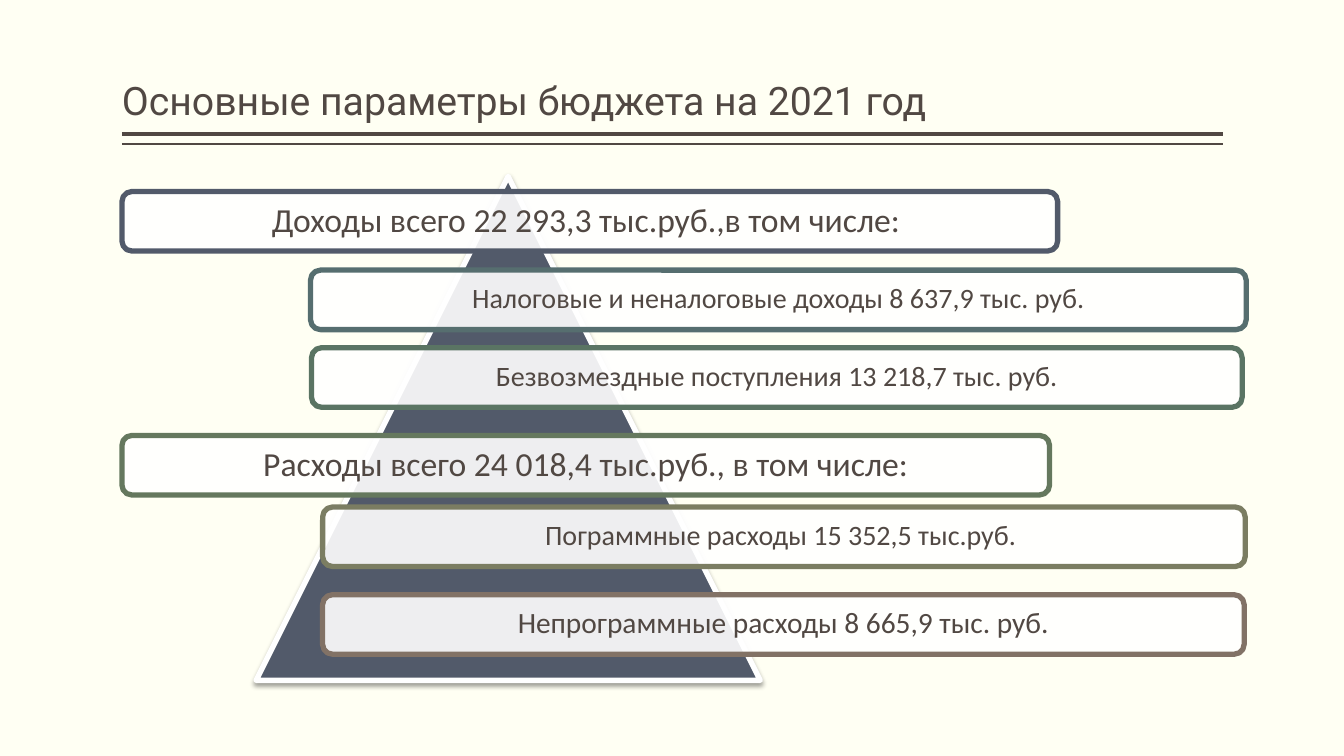
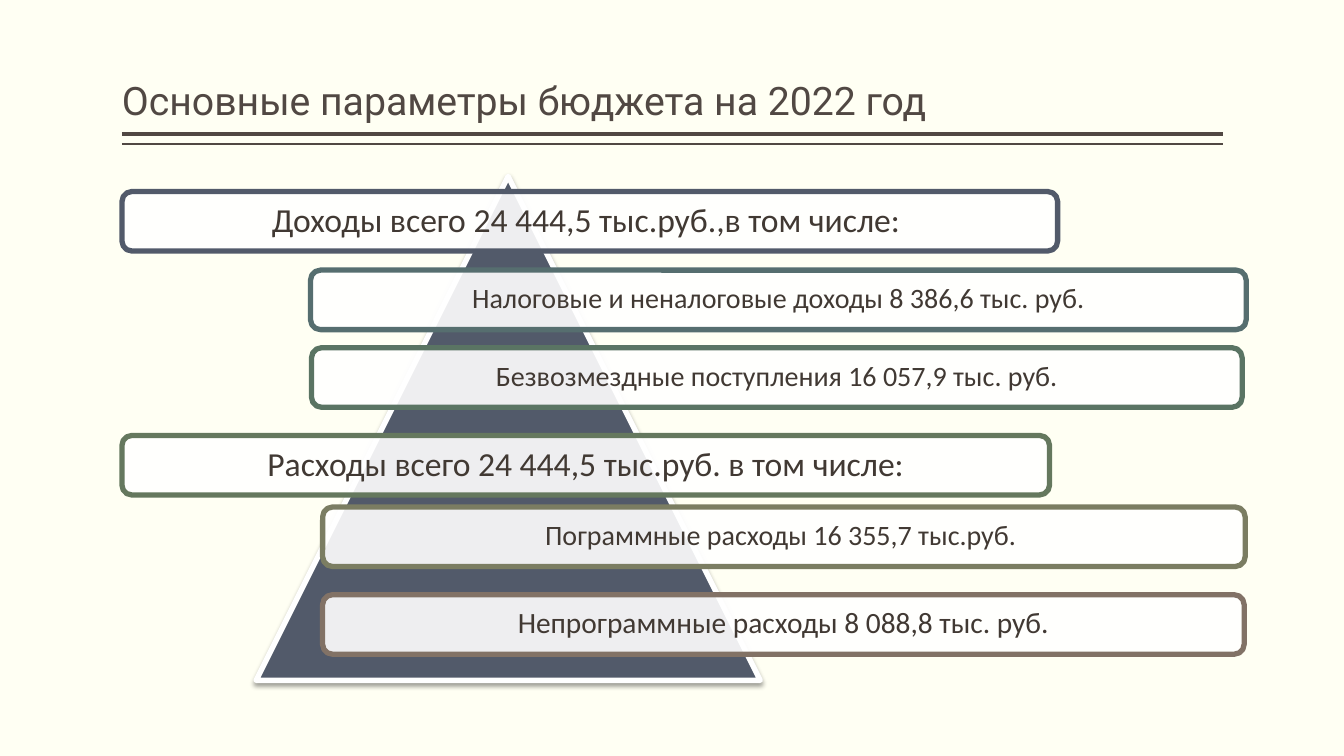
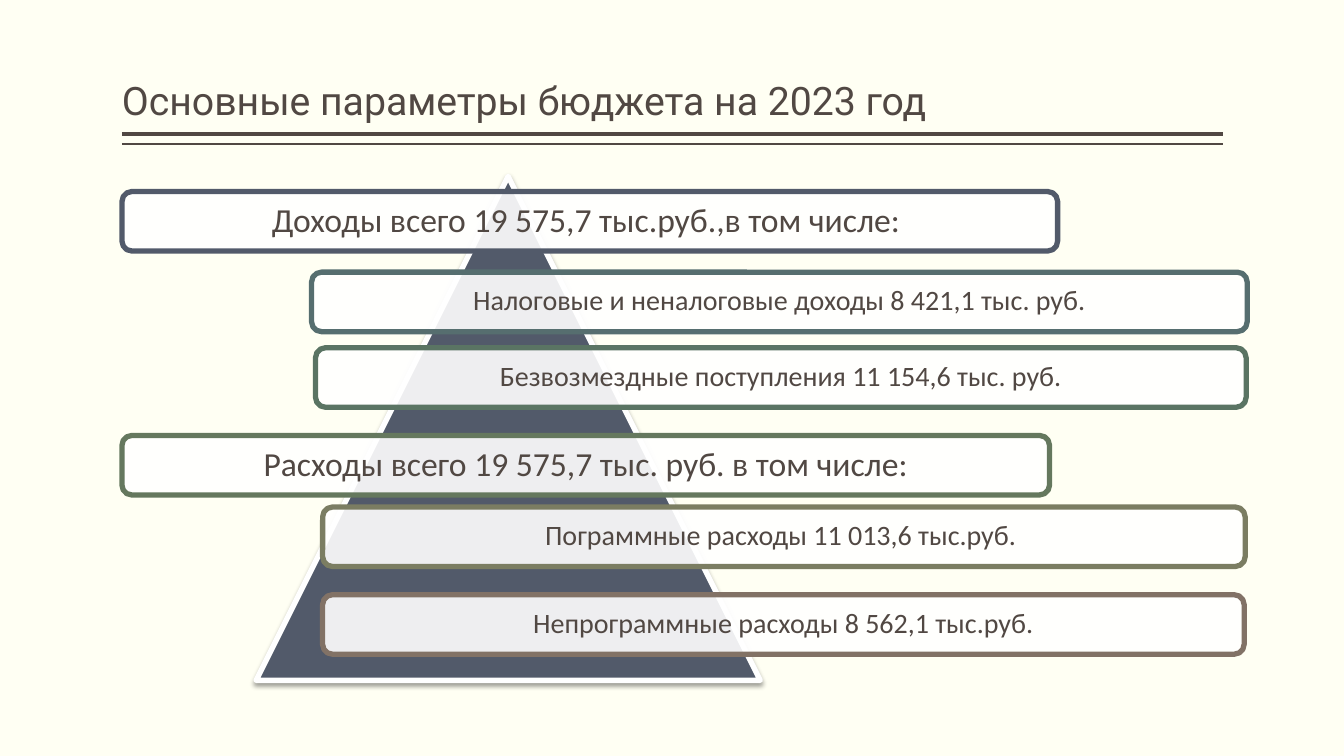
"""Build three slides with the main budget parameters for 2021 to 2023."""
from dataclasses import dataclass, replace

from lxml.etree import SubElement
from pptx import Presentation
from pptx.dml.color import RGBColor
from pptx.enum.shapes import MSO_CONNECTOR, MSO_SHAPE
from pptx.enum.text import MSO_ANCHOR, PP_ALIGN
from pptx.oxml.ns import qn
from pptx.util import Inches, Pt

BACKGROUND = "FFFFF3"
WHITE = "FFFFFF"
BROWN = "514843"
DARK_BROWN = "413933"
SLATE = "525A6A"
TITLE_FONT = "Roboto"
BODY_FONT = "Calibri"
MARGIN = 1.21
CONTENT_WIDTH = 10.92
BAR_HEIGHT = 0.59


@dataclass(frozen=True)
class Bar:
    """Place, outline colour and text size of one budget bar."""

    left: float
    top: float
    width: float
    outline: str
    size: int = 20


BARS = [
    Bar(MARGIN, 1.9, 9.28, SLATE, 24),
    Bar(3.08, 2.68, 9.28, "566E6F"),
    Bar(3.09, 3.45, 9.23, "5A7463"),
    Bar(MARGIN, 4.32, 9.2, "65785E", 24),
    Bar(3.2, 5.03, 9.15, "7B7D62"),
    Bar(3.2, 5.9, 9.14, "827266", 21),
]

BARS_2023 = [
    BARS[0],
    replace(BARS[1], left=3.09, top=2.7),
    replace(BARS[2], left=3.13),
    *BARS[3:5],
    replace(BARS[5], size=20),
]

BUDGETS = [
    (2021, BROWN, BARS, [
        "Доходы всего 22 293,3 тыс.руб.,в том числе: ",
        "Налоговые и неналоговые доходы 8 637,9 тыс. руб.",
        "Безвозмездные поступления 13 218,7 тыс. руб.",
        "Расходы всего 24 018,4 тыс.руб., в том числе:",
        "Пограммные расходы 15 352,5 тыс.руб. ",
        "Непрограммные расходы 8 665,9 тыс. руб.",
    ]),
    (2022, DARK_BROWN, BARS, [
        "Доходы всего 24 444,5 тыс.руб.,в том числе: ",
        "Налоговые и неналоговые доходы 8 386,6 тыс. руб.",
        "Безвозмездные поступления 16 057,9 тыс. руб.",
        "Расходы всего 24 444,5 тыс.руб. в том числе:",
        "Пограммные расходы 16 355,7 тыс.руб. ",
        "Непрограммные расходы 8 088,8 тыс. руб.",
    ]),
    (2023, BROWN, BARS_2023, [
        "Доходы всего 19 575,7 тыс.руб.,в том числе: ",
        "Налоговые и неналоговые доходы 8 421,1 тыс. руб.",
        "Безвозмездные поступления 11 154,6 тыс. руб.",
        "Расходы всего 19 575,7 тыс. руб. в том числе:",
        "Пограммные расходы 11 013,6 тыс.руб. ",
        "Непрограммные расходы 8 562,1 тыс.руб.",
    ]),
]


def paint(color_format, color):
    """Apply a hex colour to a fill or a line's fill."""
    color_format.solid()
    color_format.fore_color.rgb = RGBColor.from_string(color)


def set_text(shape, text, font, size, color, alignment, anchor, insets):
    """Write one formatted paragraph into a shape."""
    frame = shape.text_frame
    frame.word_wrap = True
    frame.vertical_anchor = anchor
    frame.margin_left = frame.margin_right = Inches(insets[0])
    frame.margin_top = frame.margin_bottom = Inches(insets[1])
    paragraph = frame.paragraphs[0]
    paragraph.text = text
    paragraph.alignment = alignment
    paragraph.line_spacing = 0.9
    paragraph.font.name = font
    paragraph.font.size = Pt(size)
    paint(paragraph.font.fill, color)


def add_title(slide, text):
    """Add the slide title."""
    box = slide.shapes.add_textbox(
        Inches(MARGIN), Inches(0.08), Inches(CONTENT_WIDTH), Inches(1.2))
    set_text(box, text, TITLE_FONT, 28, BROWN, PP_ALIGN.LEFT,
             MSO_ANCHOR.BOTTOM, (0, 0.05))


def add_rule(slide, top, weight):
    """Add a horizontal rule below the title."""
    rule = slide.shapes.add_connector(
        MSO_CONNECTOR.STRAIGHT, Inches(MARGIN), Inches(top),
        Inches(MARGIN + CONTENT_WIDTH), Inches(top))
    paint(rule.line.fill, BROWN)
    rule.line.width = Pt(weight)
    SubElement(rule.element.spPr, qn("a:effectLst"))


def add_outlined_shape(slide, kind, place, fill, outline, weight):
    """Add a filled preset shape with an outline and no shadow."""
    shape = slide.shapes.add_shape(kind, *map(Inches, place))
    shape.shadow.inherit = False
    paint(shape.fill, fill)
    paint(shape.line.fill, outline)
    shape.line.width = Pt(weight)
    return shape


def add_pyramid(slide):
    """Add the triangle with its soft shadow behind the bars."""
    pyramid = add_outlined_shape(
        slide, MSO_SHAPE.ISOSCELES_TRIANGLE, (2.54, 1.75, 5, 5),
        SLATE, WHITE, 3.82)
    effects = pyramid.element.spPr.find(qn("a:effectLst"))
    shadow = SubElement(
        effects, qn("a:outerShdw"), blurRad=str(Pt(3.5)), dist=str(Pt(2)),
        dir="5400000", algn="ctr", rotWithShape="0")
    color = SubElement(shadow, qn("a:srgbClr"), val="000000")
    SubElement(color, qn("a:alpha"), val="38000")


def add_bar(slide, bar, text, color):
    """Add one translucent rounded bar with centred text."""
    shape = add_outlined_shape(
        slide, MSO_SHAPE.ROUNDED_RECTANGLE,
        (bar.left, bar.top, bar.width, BAR_HEIGHT), WHITE, bar.outline, 3.78)
    fill = shape.element.spPr.find(qn("a:solidFill"))
    SubElement(fill.find(qn("a:srgbClr")), qn("a:alpha"), val="90000")
    set_text(shape, text, BODY_FONT, bar.size, color, PP_ALIGN.CENTER,
             MSO_ANCHOR.MIDDLE, (0.1, 0.1))


def main():
    """Build and save the presentation."""
    presentation = Presentation()
    presentation.slide_width = Inches(13.33)
    presentation.slide_height = Inches(7.5)
    paint(presentation.slide_master.background.fill, BACKGROUND)
    for year, color, bars, texts in BUDGETS:
        slide = presentation.slides.add_slide(presentation.slide_layouts[6])
        add_rule(slide, 1.33, 3)
        add_rule(slide, 1.43, 1)
        add_title(slide, f"Основные параметры бюджета на {year} год")
        add_pyramid(slide)
        for bar, text in zip(bars, texts):
            add_bar(slide, bar, text, color)
    presentation.save("out.pptx")


if __name__ == "__main__":
    main()
